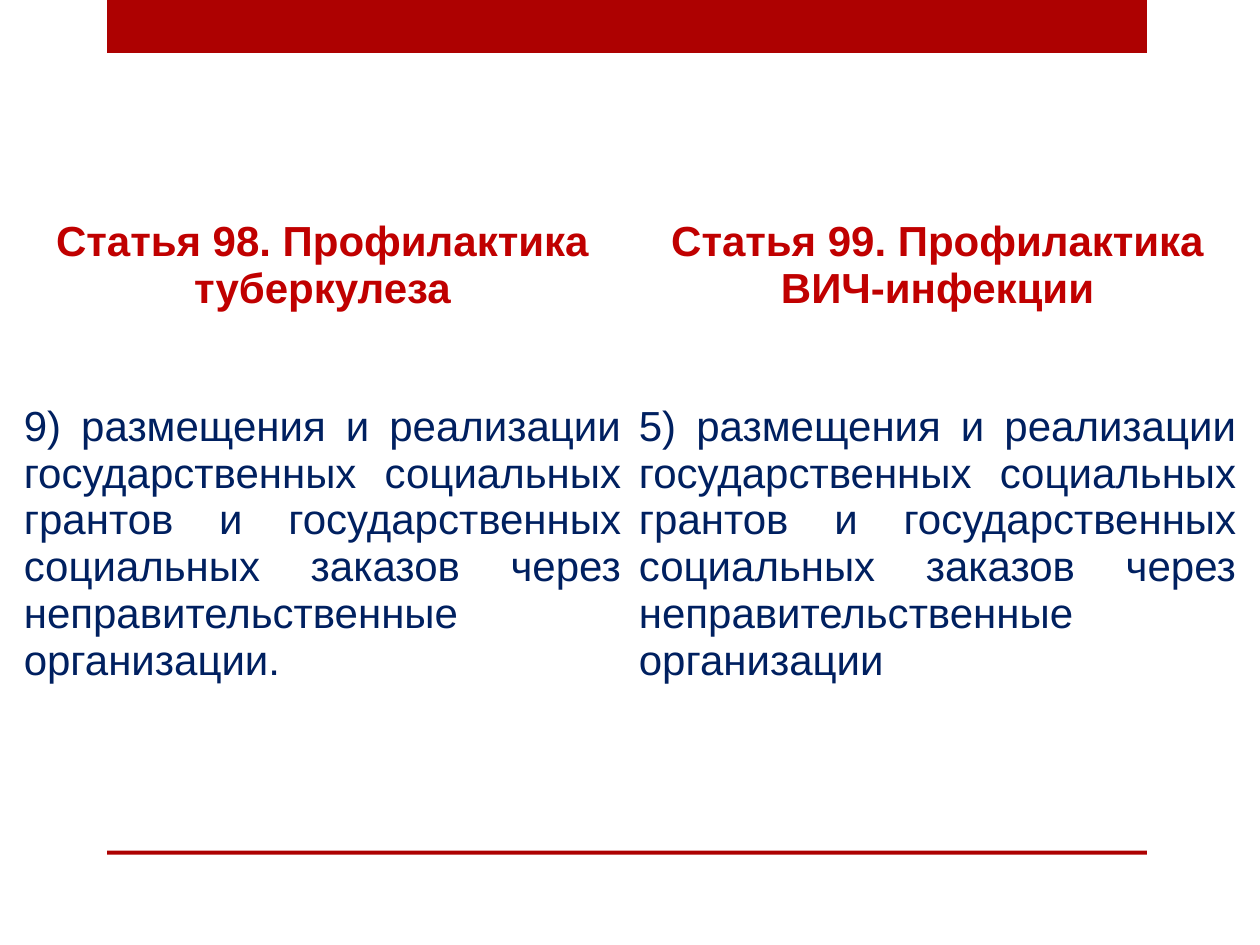
from pptx import Presentation
from pptx.dml.color import RGBColor
from pptx.enum.shapes import MSO_SHAPE
from pptx.enum.text import PP_ALIGN
from pptx.util import Cm, Pt

RECT = MSO_SHAPE.RECTANGLE
CENTER, JUSTIFY = PP_ALIGN.CENTER, PP_ALIGN.JUSTIFY


def fill(target, color):
    target.fill.solid()
    target.fill.fore_color.rgb = RGBColor.from_string(color)


prs = Presentation()
prs.slide_width, prs.slide_height = Cm(25.4), Cm(19.05)
s = prs.slides.add_slide(prs.slide_layouts[6])

# Top band and bottom rule
for top, height in [(0, 1.07), (17.15, 0.08)]:
    sp = s.shapes.add_shape(RECT, Cm(2.16), Cm(top), Cm(20.96), Cm(height))
    sp.shadow.inherit = False
    fill(sp, "AD0101")
    sp.line.fill.background()

# Articles side by side: heading row, then clause row
rows = [
    ["Статья 98. Профилактика туберкулеза",
     "Статья 99. Профилактика ВИЧ-инфекции"],
    ["9) размещения и реализации государственных социальных грантов и "
     "государственных социальных заказов через неправительственные организации.",
     "5) размещения и реализации государственных социальных грантов и "
     "государственных социальных заказов через неправительственные организации"],
]
# Row height, top margin, alignment, bold, text colour
styles = [(4.67, 1.07, CENTER, True, "C00000"),
          (7.14, 0.13, JUSTIFY, False, "002060")]

table = s.shapes.add_table(2, 2, Cm(0.3), Cm(3.33), Cm(24.8), Cm(11.81)).table
for i, (height, margin, align, bold, color) in enumerate(styles):
    table.rows[i].height = Cm(height)
    for cell, text in zip(table.rows[i].cells, rows[i]):
        fill(cell, "FFFFFF")
        cell.margin_left = cell.margin_right = Cm(0.18)
        cell.margin_top, cell.margin_bottom = Cm(margin), Cm(0.13)
        cell.text = text
        p = cell.text_frame.paragraphs[0]
        p.alignment = align
        p.font.name, p.font.size, p.font.bold = "Arial", Pt(24), bold
        p.font.color.rgb = RGBColor.from_string(color)

prs.save("out.pptx")
